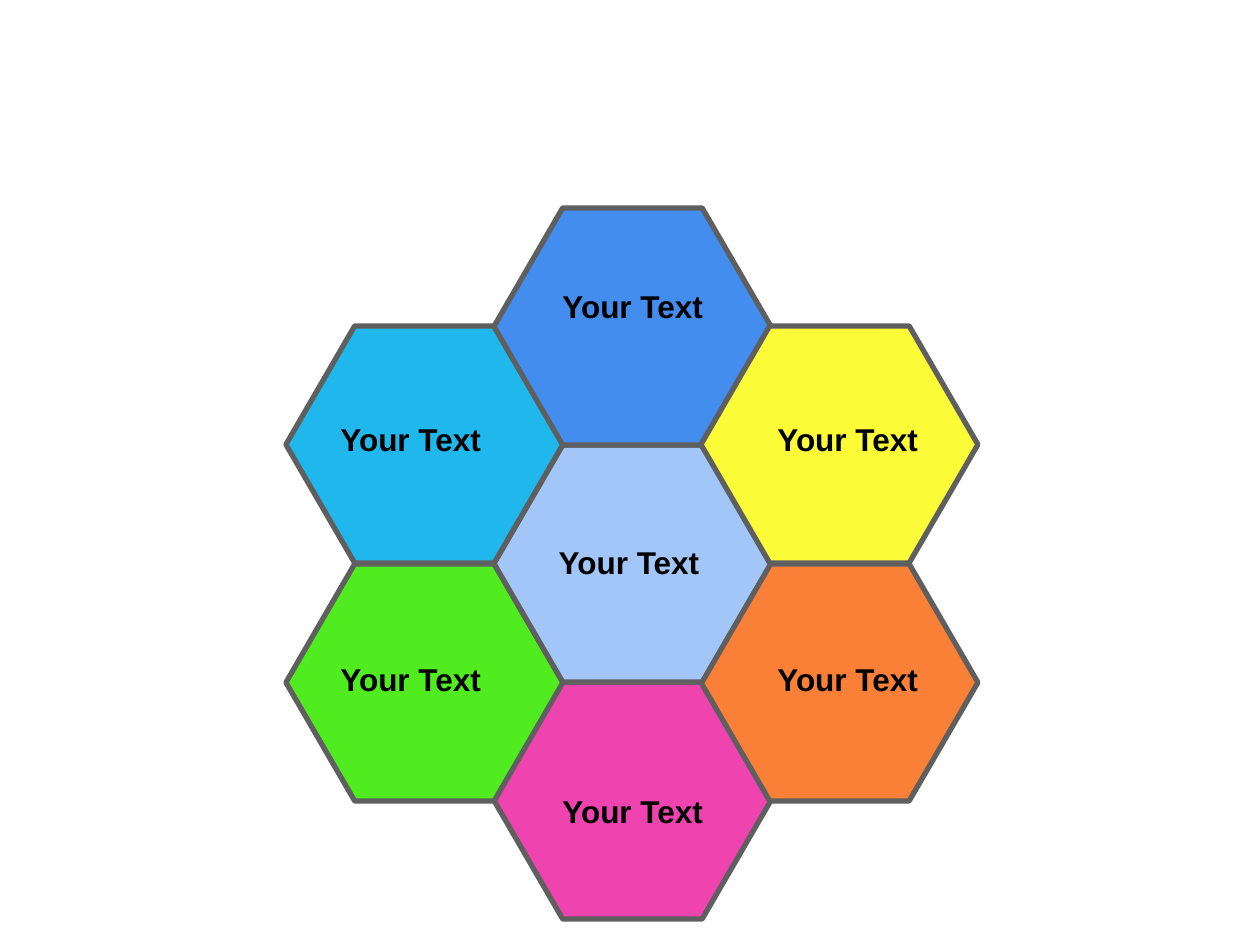
from pptx import Presentation
from pptx.dml.color import RGBColor
from pptx.enum.shapes import MSO_SHAPE
from pptx.enum.text import MSO_AUTO_SIZE, PP_ALIGN
from pptx.util import Emu, Pt

HEXAGON = MSO_SHAPE.HEXAGON
FIT_SHAPE = MSO_AUTO_SIZE.SHAPE_TO_FIT_TEXT
LEFT, CENTER = PP_ALIGN.LEFT, PP_ALIGN.CENTER

PX = 914400 // 126
CELL_W, CELL_H = 277, 237
COL_STEP, ROW_STEP = 415 / 2, CELL_H / 2
LABEL_W, LABEL_H = 170, 50

# column, row (in half cells), fill, label offset within the cell
CELLS = [
    (1, 4, "EF43AF", 57, 104),
    (0, 3, "50EC20", 42, 90),
    (2, 3, "FB8037", 64, 90),
    (1, 2, "A1C6F7", 51, 92),
    (0, 1, "20B7EC", 42, 87),
    (1, 0, "438DEF", 57, 73),
    (2, 1, "FBFB37", 64, 87),
]


def px(*lengths):
    return [Emu(round(n) * PX) for n in lengths]


def rgb(value):
    return RGBColor.from_string(value)


def add_text(s, text, box, size=18, color="000000", bold=True, align=LEFT, wrap=False):
    tf = s.shapes.add_textbox(*px(*box)).text_frame
    tf.word_wrap = wrap
    tf.auto_size = FIT_SHAPE
    p = tf.paragraphs[0]
    p.alignment = align
    r = p.add_run()
    r.text = text
    r.font.name = "Arial"
    r.font.size = Pt(size)
    r.font.bold = bold
    r.font.color.rgb = rgb(color)


def add_cell(s, x, y, fill):
    sp = s.shapes.add_shape(HEXAGON, *px(x, y, CELL_W, CELL_H))
    sp.adjustments[0] = 0.29
    sp.shadow.inherit = False
    sp.fill.solid()
    sp.fill.fore_color.rgb = rgb(fill)
    sp.line.color.rgb = rgb("5F5F5F")
    sp.line.width = Pt(3)


def add_honeycomb(s, left, top):
    placed = [(left + col * COL_STEP, top + row * ROW_STEP, fill, dx, dy)
              for col, row, fill, dx, dy in CELLS]
    for x, y, fill, _, _ in placed:
        add_cell(s, x, y, fill)
    for (col, row, *_), (x, y, _, dx, dy) in zip(CELLS, placed):
        middle = (col, row) == (1, 2)
        add_text(s, "Your Text", (x + dx, y + dy, LABEL_W, LABEL_H),
                 align=CENTER if middle else LEFT, wrap=middle)


def main():
    prs = Presentation()
    prs.slide_width, prs.slide_height = px(1260, 945)
    s = prs.slides.add_slide(prs.slide_layouts[6])
    add_honeycomb(s, 286, 208)
    prs.save("out.pptx")


if __name__ == "__main__":
    main()
